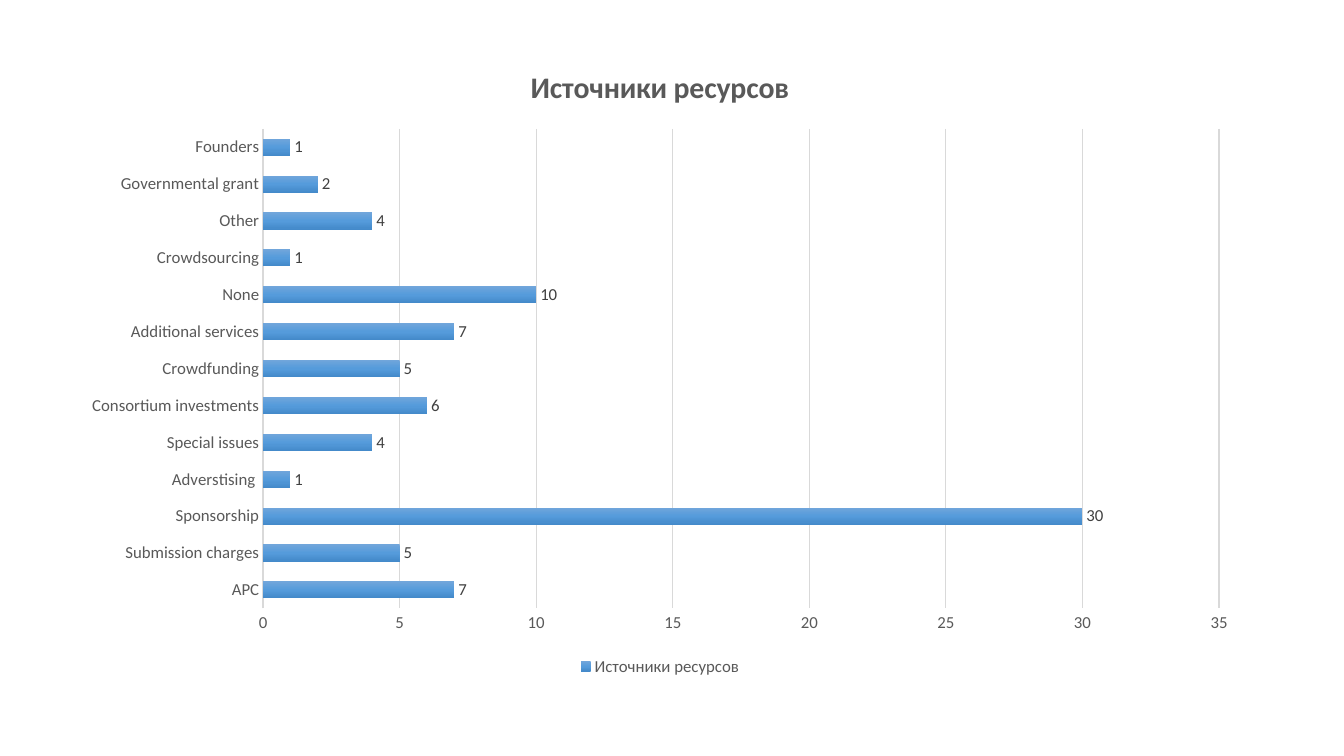
from copy import deepcopy

from pptx import Presentation
from pptx import util as u
from pptx.chart.data import CategoryChartData
from pptx.dml.color import RGBColor
from pptx.enum import chart as ch

TITLE = "Источники ресурсов"
FONT = "Calibri"
GRAY, GRID, DARK = "595959", "D9D9D9", "404040"
SOURCES = {
    "APC": 7,
    "Submission charges": 5,
    "Sponsorship": 30,
    "Adverstising ": 1,
    "Special issues": 4,
    "Consortium investments": 6,
    "Crowdfunding": 5,
    "Additional services": 7,
    "None": 10,
    "Crowdsourcing": 1,
    "Other": 4,
    "Governmental grant": 2,
    "Founders": 1,
}
BAR_STOPS = [(0, "71A6DB"), (0.5, "559BDB"), (1, "448ACA")]


def rgb(color):
    """Return the colour for a hex string."""
    return RGBColor.from_string(color)


def set_attrs(obj, **values):
    """Set each named attribute on an object."""
    for name, value in values.items():
        setattr(obj, name, value)


def style_font(font, color, size=12, bold=False):
    """Format a font."""
    set_attrs(font, name=FONT, size=u.Pt(size), bold=bold)
    font.color.rgb = rgb(color)


def style_line(line, width):
    """Give a line the grid colour and a width in points."""
    line.color.rgb = rgb(GRID)
    line.width = u.Pt(width)


def add_bar_chart(s):
    """Add the bar chart with its data and return it."""
    data = CategoryChartData()
    data.categories = list(SOURCES)
    data.add_series(TITLE, list(SOURCES.values()))
    frame = s.shapes.add_chart(
        ch.XL_CHART_TYPE.BAR_CLUSTERED, u.Inches(0.68), u.Inches(0.43),
        u.Inches(11.73), u.Inches(6.32), data)
    style_font(frame.chart.font, "000000", 10)
    return frame.chart


def style_title(chart):
    """Write the chart title."""
    chart.has_title = True
    tf = chart.chart_title.text_frame
    tf.text = TITLE
    style_font(tf.paragraphs[0].runs[0].font, GRAY, 21.3, True)
    chart.chart_title.include_in_layout = False


def style_axes(chart):
    """Format both axes and the gridlines."""
    for axis in (chart.category_axis, chart.value_axis):
        set_attrs(axis, major_tick_mark=ch.XL_TICK_MARK.NONE,
                  minor_tick_mark=ch.XL_TICK_MARK.NONE)
        style_font(axis.tick_labels.font, GRAY)
    style_line(chart.category_axis.format.line, 1)
    axis = chart.value_axis
    set_attrs(axis, minimum_scale=0, maximum_scale=35, major_unit=5,
              has_major_gridlines=True)
    axis.format.line.fill.background()
    style_line(axis.major_gridlines.format.line, 0.75)


def style_legend(chart):
    """Place the legend below the plot."""
    chart.has_legend = True
    set_attrs(chart.legend, position=ch.XL_LEGEND_POSITION.BOTTOM,
              include_in_layout=False)
    style_font(chart.legend.font, GRAY)


def style_bars(chart):
    """Set bar spacing, gradient and value labels."""
    plot = chart.plots[0]
    set_attrs(plot, gap_width=115, overlap=-20, vary_by_categories=False,
              has_data_labels=True)
    set_attrs(plot.data_labels, show_value=True,
              position=ch.XL_LABEL_POSITION.OUTSIDE_END)
    style_font(plot.data_labels.font, DARK)
    series = plot.series[0]
    fill = series.format.fill
    fill.gradient()
    fill.gradient_angle = 270
    stops = series._element.xpath(".//a:gsLst")[0]
    stops.append(deepcopy(stops[-1]))
    for stop, (position, color) in zip(fill.gradient_stops, BAR_STOPS):
        stop.position = position
        stop.color.rgb = rgb(color)


def main():
    """Build the slide and save it."""
    prs = Presentation()
    set_attrs(prs, slide_width=u.Inches(13.33), slide_height=u.Inches(7.5))
    s = prs.slides.add_slide(prs.slide_layouts[6])
    chart = add_bar_chart(s)
    for style in (style_title, style_axes, style_legend, style_bars):
        style(chart)
    prs.save("out.pptx")


if __name__ == "__main__":
    main()
